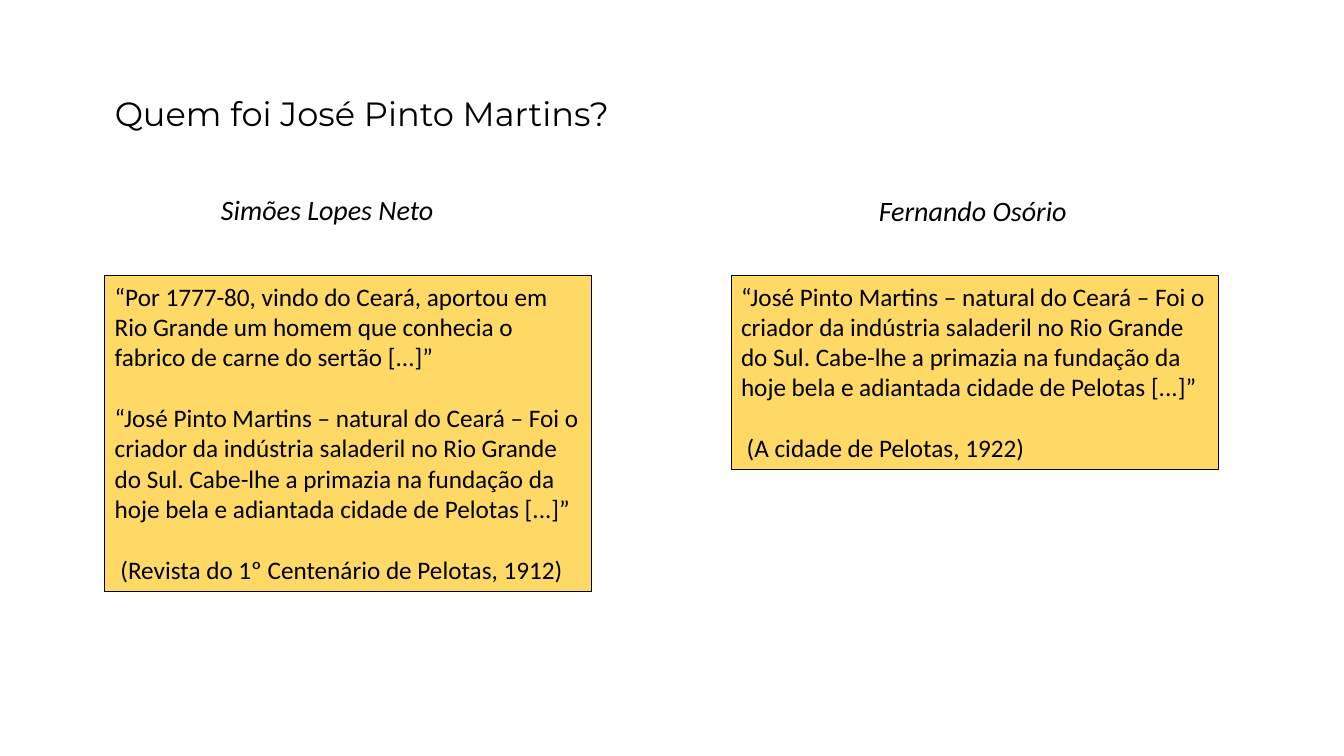
"""Build the slide that sets two accounts of José Pinto Martins side by side."""
from dataclasses import dataclass

from pptx import Presentation
from pptx.dml.color import RGBColor
from pptx.enum.shapes import MSO_SHAPE
from pptx.enum.text import MSO_ANCHOR, MSO_AUTO_SIZE, PP_ALIGN
from pptx.shapes.autoshape import Shape
from pptx.slide import Slide
from pptx.util import Inches, Pt

RECTANGLE = MSO_SHAPE.RECTANGLE
TOP = MSO_ANCHOR.TOP
GROW = MSO_AUTO_SIZE.SHAPE_TO_FIT_TEXT
LEFT = PP_ALIGN.LEFT
BLACK = RGBColor(0x00, 0x00, 0x00)
GOLD = RGBColor(0xFF, 0xD9, 0x66)
SLIDE_WIDTH, SLIDE_HEIGHT = Inches(13.33), Inches(7.5)
QUOTE_TOP, QUOTE_WIDTH = 36.5, 36.25
QUOTE_GAP = Pt(22)

TITLE_FORMAT = {"name": "Montserrat", "size": Pt(24)}
AUTHOR_FORMAT = {"name": "Calibri", "size": Pt(20), "italic": True}
QUOTE_FORMAT = {"name": "Calibri", "size": Pt(18)}

FOUNDER_QUOTE = (
    "“José Pinto Martins – natural do Ceará – Foi o criador da indústria "
    "saladeril no Rio Grande do Sul. Cabe-lhe a primazia na fundação da "
    "hoje bela e adiantada cidade de Pelotas [...]”"
)
ARRIVAL_QUOTE = (
    "“Por 1777-80, vindo do Ceará, aportou em Rio Grande um homem que "
    "conhecia o fabrico de carne do sertão [...]”"
)


@dataclass(frozen=True)
class Area:
    """Place on the slide, in percent of its width and height."""

    left: float
    top: float
    width: float
    height: float

    def lengths(self) -> tuple[int, int, int, int]:
        """Return the left, top, width and height as slide lengths."""
        return (
            int(SLIDE_WIDTH * self.left / 100),
            int(SLIDE_HEIGHT * self.top / 100),
            int(SLIDE_WIDTH * self.width / 100),
            int(SLIDE_HEIGHT * self.height / 100),
        )


@dataclass(frozen=True)
class Account:
    """One author's account: the name and the quoted passages."""

    author: str
    author_area: Area
    quote_left: float
    quote_height: float
    passages: tuple[str, ...]


ACCOUNTS = (
    Account(
        "Simões Lopes Neto", Area(15.7, 24.8, 17.8, 5.9), 7.8, 41.7,
        (ARRIVAL_QUOTE, FOUNDER_QUOTE, " (Revista do 1º Centenário de Pelotas, 1912)"),
    ),
    Account(
        "Fernando Osório", Area(64.65, 24.9, 15.6, 5.9), 54.4, 25.6,
        (FOUNDER_QUOTE, " (A cidade de Pelotas, 1922)"),
    ),
)


def write(holder: Shape, passages: tuple[str, ...], text_format: dict, wrap: bool = True) -> None:
    """Fill a shape with formatted passages, one paragraph each."""
    frame = holder.text_frame
    frame.word_wrap = wrap
    frame.auto_size = GROW
    frame.vertical_anchor = TOP
    for index, passage in enumerate(passages):
        paragraph = frame.add_paragraph() if index else frame.paragraphs[0]
        paragraph.alignment = LEFT
        if index:
            paragraph.space_before = QUOTE_GAP
        run = paragraph.add_run()
        run.text = passage
        run.font.color.rgb = BLACK
        for attribute, value in text_format.items():
            setattr(run.font, attribute, value)


def draw_account(slide: Slide, account: Account) -> None:
    """Draw an author's name and the framed quotation below it."""
    author = slide.shapes.add_textbox(*account.author_area.lengths())
    write(author, (account.author,), AUTHOR_FORMAT, wrap=False)

    area = Area(account.quote_left, QUOTE_TOP, QUOTE_WIDTH, account.quote_height)
    quotation = slide.shapes.add_shape(RECTANGLE, *area.lengths())
    quotation.shadow.inherit = False
    quotation.fill.solid()
    quotation.fill.fore_color.rgb = GOLD
    quotation.line.color.rgb = BLACK
    quotation.line.width = Pt(0.75)
    write(quotation, account.passages, QUOTE_FORMAT)


def main() -> None:
    """Build and save the presentation."""
    presentation = Presentation()
    presentation.slide_width, presentation.slide_height = SLIDE_WIDTH, SLIDE_HEIGHT
    slide = presentation.slides.add_slide(presentation.slide_layouts[6])
    title = slide.shapes.add_textbox(*Area(7.8, 11.6, 51.8, 6.7).lengths())
    write(title, ("Quem foi José Pinto Martins?",), TITLE_FORMAT)
    for account in ACCOUNTS:
        draw_account(slide, account)
    presentation.save("out.pptx")


if __name__ == "__main__":
    main()
